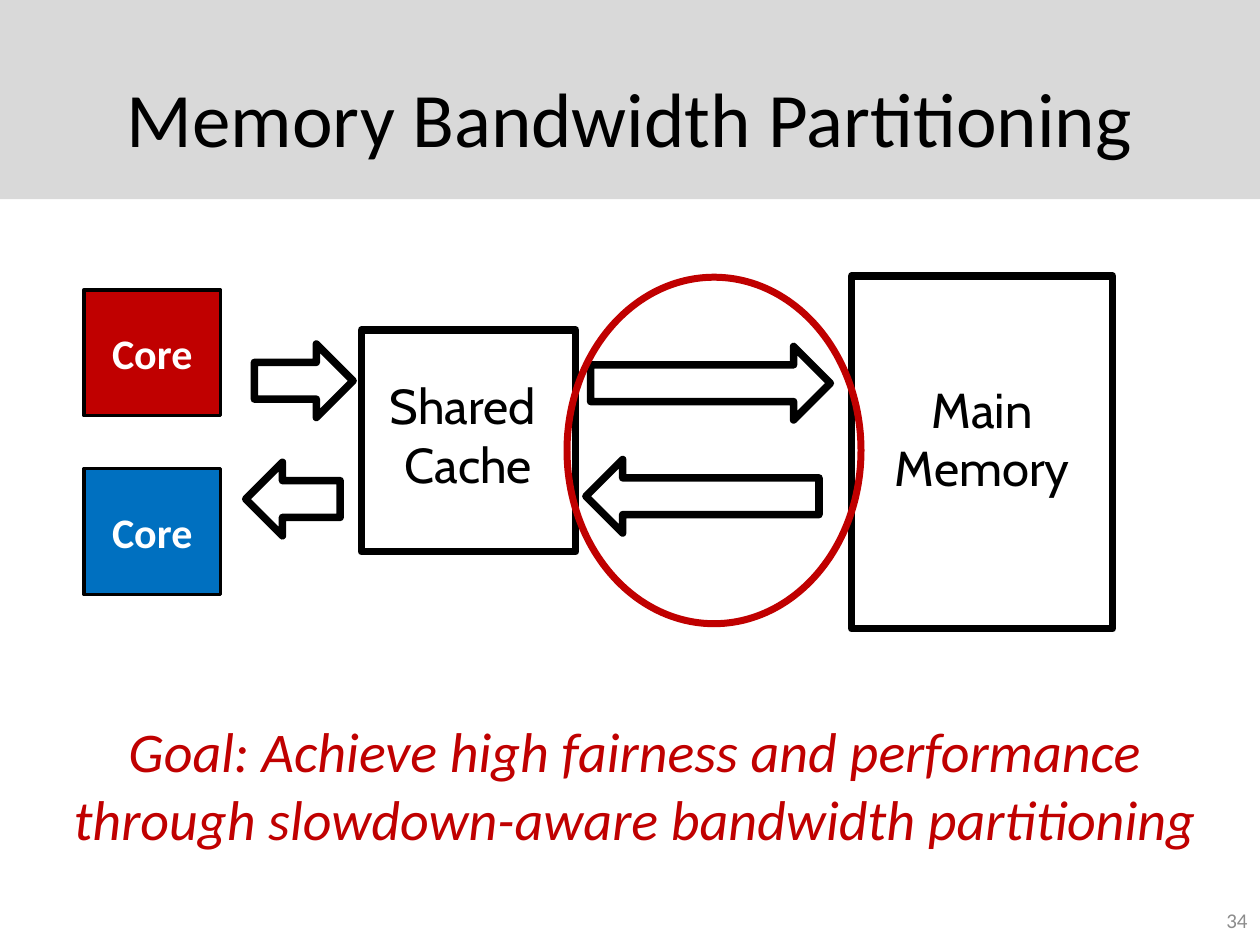
from dataclasses import dataclass

import pptx
import pptx.dml.color
import pptx.enum.shapes
import pptx.enum.text
import pptx.util

Pt = pptx.util.Pt
Shape = pptx.enum.shapes.MSO_SHAPE
Align = pptx.enum.text.PP_ALIGN
Anchor = pptx.enum.text.MSO_ANCHOR


@dataclass(frozen=True)
class Theme:
    """Colours, fonts, type sizes and line widths."""
    black: str = "000000"
    white: str = "FFFFFF"
    band: str = "D9D9D9"
    red: str = "C00000"
    blue: str = "0070C0"
    grey: str = "8C8C8C"
    body_font: str = "Calibri"
    label_font: str = "Cabin"
    title_size: float = 44
    goal_size: float = 32
    label_size: float = 28
    core_size: float = 24
    number_size: float = 12
    heavy_line: float = 4.32
    ring_line: float = 4
    core_line: float = 2


THEME = Theme()


def rgb(color):
    """Return a colour object for a hex string."""
    return pptx.dml.color.RGBColor.from_string(color)


def write(box, lines, size, color, font=THEME.body_font, align=Align.CENTER,
          anchor=Anchor.TOP, bold=False, italic=False):
    """Fill a box with one paragraph per line in a single style."""
    frame = box.text_frame
    frame.word_wrap = True
    frame.vertical_anchor = anchor
    frame.text = "\n".join(lines)
    for paragraph in frame.paragraphs:
        paragraph.alignment = align
        paragraph.font.name = font
        paragraph.font.size = Pt(size)
        paragraph.font.color.rgb = rgb(color)
        paragraph.font.bold = bold
        paragraph.font.italic = italic


def add_text(page, bounds, lines, size, color, **style):
    """Add a wrapped text box."""
    box = page.shapes.add_textbox(*map(Pt, bounds))
    write(box, lines, size, color, **style)


def add_figure(page, kind, bounds, fill=None, line=None, width=THEME.heavy_line):
    """Add a preset shape with optional fill and outline."""
    figure = page.shapes.add_shape(kind, *map(Pt, bounds))
    figure.shadow.inherit = False
    if fill:
        figure.fill.solid()
        figure.fill.fore_color.rgb = rgb(fill)
    else:
        figure.fill.background()
    if line:
        figure.line.color.rgb = rgb(line)
        figure.line.width = Pt(width)
    else:
        figure.line.fill.background()
    return figure


def add_unit(page, bounds, label_bounds, lines):
    """Add an outlined hardware block and its label."""
    add_figure(page, Shape.RECTANGLE, bounds, line=THEME.black)
    add_text(page, label_bounds, lines, THEME.label_size, THEME.black,
             font=THEME.label_font)


def add_core(page, top, fill):
    """Add a coloured processor core."""
    core = add_figure(page, Shape.RECTANGLE, (48, top, 78, 72), fill,
                      THEME.black, THEME.core_line)
    write(core, ["Core"], THEME.core_size, THEME.white,
          anchor=Anchor.MIDDLE, bold=True)


def add_arrow(page, kind, left, top, width):
    """Add an outlined block arrow of the common height."""
    add_figure(page, kind, (left, top, width, 42), line=THEME.black)


def main():
    """Build the slide and save it."""
    deck = pptx.Presentation()
    deck.slide_width, deck.slide_height = Pt(720), Pt(540)
    page = deck.slides.add_slide(deck.slide_layouts[6])

    add_figure(page, Shape.RECTANGLE, (0, 0, 720, 113.8), THEME.band)
    add_text(page, (36, 21.6, 648, 90), ["Memory Bandwidth Partitioning"],
             THEME.title_size, THEME.black, anchor=Anchor.MIDDLE)
    add_text(page, (552, 511.2, 168, 28.8), ["34"], THEME.number_size,
             THEME.grey, align=Align.RIGHT, anchor=Anchor.MIDDLE)

    add_unit(page, (486.7, 157.7, 149, 201.6), (488.9, 213.1, 144.7, 75),
             ["Main Memory"])
    add_unit(page, (206.6, 188.6, 122.4, 126.7), (208.1, 211, 118.8, 75),
             ["Shared ", "Cache"])

    for kind, left, top, width in (
        (Shape.RIGHT_ARROW, 337.5, 198, 137),
        (Shape.LEFT_ARROW, 334.8, 262.6, 133.2),
        (Shape.RIGHT_ARROW, 145.4, 196.6, 56.4),
        (Shape.LEFT_ARROW, 140.4, 264.2, 54),
    ):
        add_arrow(page, kind, left, top, width)

    add_core(page, 165.6, THEME.red)
    add_core(page, 267.8, THEME.blue)
    add_figure(page, Shape.OVAL, (324, 158.4, 168, 198), line=THEME.red,
               width=THEME.ring_line)
    add_text(page, (18, 406.1, 689.8, 85),
             ["Goal: Achieve high fairness and performance through "
              "slowdown-aware bandwidth partitioning"],
             THEME.goal_size, THEME.red, italic=True)

    deck.save("out.pptx")


if __name__ == "__main__":
    main()
